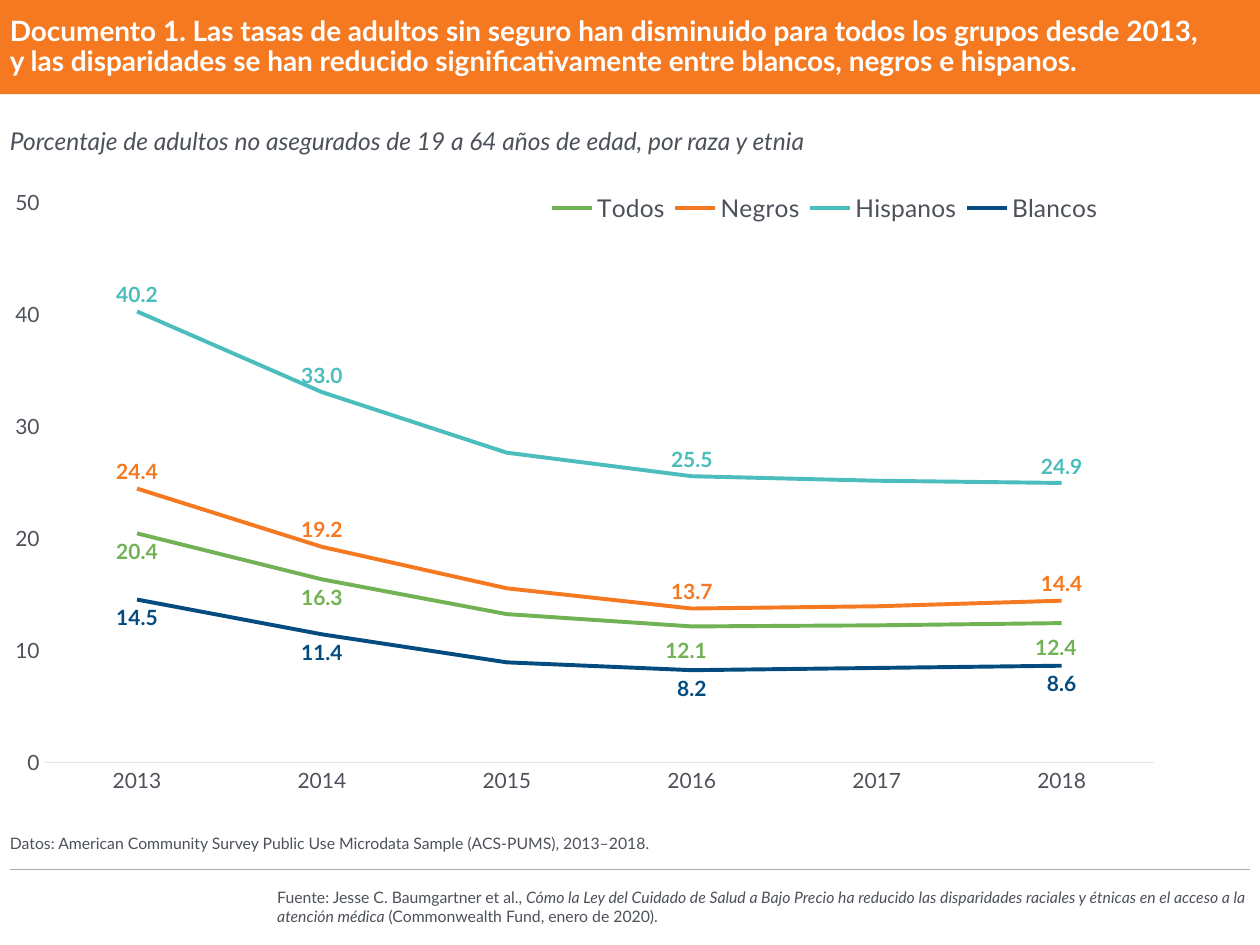
"""Slide on uninsured adult rates by race and ethnicity."""
from lxml import etree
from pptx import Presentation
from pptx import util as u
from pptx.chart import data
from pptx.dml.color import RGBColor
from pptx.enum import chart as charts, shapes, text
from pptx.oxml import ns

WHITE = RGBColor(0xFF, 0xFF, 0xFF)
ORANGE = RGBColor(0xF4, 0x79, 0x20)
GREEN = RGBColor(0x71, 0xB2, 0x54)
TEAL = RGBColor(0x4A, 0xBD, 0xBC)
NAVY = RGBColor(0x04, 0x4C, 0x7F)
INK = RGBColor(0x4C, 0x51, 0x5A)
RULE = RGBColor(0xAB, 0xAB, 0xAB)
AXIS = RGBColor(0xE3, 0xE5, 0xE7)

FONT = "Lato"
MARGIN = 0.2
BAND_HEIGHT = 1.9
CONTENT_WIDTH = 25
YEARS = ["2013", "2014", "2015", "2016", "2017", "2018"]
UNLABELLED = (2, 4)
ABOVE = charts.XL_LABEL_POSITION.ABOVE
BELOW = charts.XL_LABEL_POSITION.BELOW
SERIES = [
    ("Todos", (20.4, 16.3, 13.2, 12.1, 12.2, 12.4), GREEN, BELOW),
    ("Negros", (24.4, 19.2, 15.5, 13.7, 13.9, 14.4), ORANGE, ABOVE),
    ("Hispanos", (40.2, 33, 27.6, 25.5, 25.1, 24.9), TEAL, ABOVE),
    ("Blancos", (14.5, 11.4, 8.9, 8.2, 8.4, 8.6), NAVY, BELOW),
]


def set_font(font, color, **formats):
    """Apply the slide font, a colour and any other font values."""
    font.color.rgb = color
    for name, value in {"name": FONT, **formats}.items():
        setattr(font, name, value)


def place(shape, left, top, width, height):
    """Move and size a shape in centimetres."""
    box = {"left": left, "top": top, "width": width, "height": height}
    for name, value in box.items():
        setattr(shape, name, u.Cm(value))


def write_text(shape, runs, color, size, anchor=text.MSO_ANCHOR.MIDDLE, **spacing):
    """Fill a shape with one left-aligned paragraph of formatted runs."""
    frame = shape.text_frame
    formats = {"margin_left": 0, "margin_right": 0, "margin_top": 0,
               "margin_bottom": 0, "word_wrap": True,
               "auto_size": text.MSO_AUTO_SIZE.NONE, "vertical_anchor": anchor}
    for name, value in formats.items():
        setattr(frame, name, value)
    paragraph = frame.paragraphs[0]
    properties = paragraph._p.get_or_add_pPr()
    properties.set("marL", "0")
    properties.set("indent", "0")
    etree.SubElement(properties, ns.qn("a:buNone"))
    layout = {"alignment": text.PP_ALIGN.LEFT, "space_before": u.Pt(0), **spacing}
    for name, value in layout.items():
        setattr(paragraph, name, value)
    for wording, style in runs:
        for index, line in enumerate(wording.split("\n")):
            if index:
                paragraph.add_line_break()
            run = paragraph.add_run()
            run.text = line
            set_font(run.font, color, size=u.Pt(size), **style)


def add_text(slide, box, runs, size):
    """Add a text box in the ink colour."""
    shape = slide.shapes.add_textbox(*map(u.Cm, box))
    write_text(shape, runs, INK, size)


def add_band(slide, width):
    """Add the coloured band behind the title."""
    band = slide.shapes.add_shape(
        shapes.MSO_SHAPE.RECTANGLE, 0, 0, width, u.Cm(BAND_HEIGHT))
    band.shadow.inherit = False
    band.fill.solid()
    band.fill.fore_color.rgb = ORANGE
    band.line.fill.background()
    slide.shapes.title.element.addprevious(band.element)


def add_rule(slide, top):
    """Add the thin footer rule."""
    line = slide.shapes.add_connector(
        shapes.MSO_CONNECTOR.STRAIGHT, u.Cm(MARGIN), u.Cm(top),
        u.Cm(MARGIN + CONTENT_WIDTH), u.Cm(top))
    line.line.color.rgb = RULE
    line.line.width = u.Pt(0.75)
    etree.SubElement(line.element.spPr, ns.qn("a:effectLst"))


def manual_layout(inner=False, edge=True, **values):
    """Return a chart layout element with fractions of the chart size."""
    layout = etree.Element(ns.qn("c:layout"))
    manual = etree.SubElement(layout, ns.qn("c:manualLayout"))
    entries = {"layoutTarget": "inner"} if inner else {}
    if edge:
        entries.update(xMode="edge", yMode="edge")
    for name, value in {**entries, **values}.items():
        etree.SubElement(manual, ns.qn(f"c:{name}")).set("val", str(value))
    return layout


def format_axis(axis):
    """Give an axis its font and remove ticks and gridlines."""
    axis.has_major_gridlines = False
    axis.major_tick_mark = axis.minor_tick_mark = charts.XL_TICK_MARK.NONE
    set_font(axis.tick_labels.font, INK, size=u.Pt(12))


def format_series(series, color, position):
    """Colour a line and its value labels."""
    series.smooth = False
    series.format.line.color.rgb = color
    series.format.line.width = u.Pt(2.25)
    labels = series.data_labels
    formats = {"show_value": True, "position": position,
               "number_format": "#,##0.0", "number_format_is_linked": False}
    for name, value in formats.items():
        setattr(labels, name, value)
    set_font(labels.font, color, size=u.Pt(12), bold=True)


def hide_labels(chart):
    """Delete the labels of the years that show no value."""
    for labels in chart.element.xpath(".//c:ser/c:dLbls"):
        for index in reversed(UNLABELLED):
            label = etree.Element(ns.qn("c:dLbl"))
            etree.SubElement(label, ns.qn("c:idx")).set("val", str(index))
            etree.SubElement(label, ns.qn("c:delete")).set("val", "1")
            labels.insert(0, label)


def nudge_labels(chart, series, indexes):
    """Shift single labels of the first series down and left."""
    for index in indexes:
        label = series.points[index].data_label
        set_font(label.font, GREEN, size=u.Pt(12), bold=True)
        label.position = BELOW
        path = f".//c:ser[1]/c:dLbls/c:dLbl/c:idx[@val='{index}']"
        chart.element.xpath(path)[0].addnext(
            manual_layout(edge=False, x=-0.005, y=0.01))


def add_rate_chart(slide):
    """Add the line chart of uninsured rates."""
    chart_data = data.CategoryChartData()
    chart_data.categories = YEARS
    for name, values, _, _ in SERIES:
        chart_data.add_series(name, values)
    chart = slide.shapes.add_chart(
        charts.XL_CHART_TYPE.LINE, u.Cm(MARGIN), u.Cm(3.81),
        u.Cm(23.3), u.Cm(12.7), chart_data).chart
    chart.has_title = False
    set_font(chart.font, INK, size=u.Pt(14))
    chart.plots[0].vary_by_categories = False
    for axis in (chart.category_axis, chart.value_axis):
        format_axis(axis)
    chart.category_axis.format.line.color.rgb = AXIS
    chart.category_axis.format.line.width = u.Pt(0.75)
    value_axis = chart.value_axis
    value_axis.minimum_scale, value_axis.maximum_scale = 0, 50
    value_axis.major_unit = 10
    value_axis.tick_labels.number_format = "#,##0"
    value_axis.tick_labels.number_format_is_linked = False
    value_axis.format.line.fill.background()
    for series, (_, _, color, position) in zip(chart.plots[0].series, SERIES):
        format_series(series, color, position)
    hide_labels(chart)
    nudge_labels(chart, chart.plots[0].series[0], (3, 5))

    chart.has_legend = True
    chart.legend.position = charts.XL_LEGEND_POSITION.RIGHT
    chart.legend.include_in_layout = False
    set_font(chart.legend.font, INK, size=u.Pt(14))
    for old in chart.element.xpath(".//c:plotArea/c:layout | .//c:legend/c:layout"):
        old.getparent().remove(old)
    chart.element.xpath(".//c:plotArea")[0].insert(
        0, manual_layout(inner=True, x=0.03, y=0.02, w=0.96, h=0.89))
    chart.element.xpath(".//c:legendPos")[0].addnext(
        manual_layout(x=0.46, y=0, w=0.49, h=0.06))


def main():
    """Build and save the slide."""
    presentation = Presentation()
    presentation.slide_width, presentation.slide_height = u.Cm(25.4), u.Cm(19.05)
    slide = presentation.slides.add_slide(presentation.slide_layouts[1])
    title, body = slide.shapes.title, slide.placeholders[1]
    add_band(slide, presentation.slide_width)
    place(title, MARGIN, 0, CONTENT_WIDTH, BAND_HEIGHT)
    write_text(title, [(
        "Documento 1. Las tasas de adultos sin seguro han disminuido para todos los grupos desde 2013,\n"
        "y las disparidades se han reducido significativamente entre blancos, negros e hispanos.",
        {"bold": True})], WHITE, 16, line_spacing=0.9)
    place(body, MARGIN, 15.82, CONTENT_WIDTH, 1.37)
    write_text(body, [(
        "Datos: American Community Survey Public Use Microdata Sample (ACS-PUMS), 2013–2018.", {})],
        INK, 9, text.MSO_ANCHOR.BOTTOM, line_spacing=0.9, space_after=u.Pt(6))
    add_rule(slide, 17.53)
    add_text(slide, (5.59, 17.9, 19.69, 0.76), [
        ("Fuente: Jesse C. Baumgartner et al., ", {}),
        ("Cómo la Ley del Cuidado de Salud a Bajo Precio ha reducido las disparidades "
         "raciales y étnicas en el acceso a la atención médica", {"italic": True}),
        (" (Commonwealth Fund, enero de 2020).", {})], 9)
    add_rate_chart(slide)
    add_text(slide, (MARGIN, 2.54, 21.72, 0.6), [(
        "Porcentaje de adultos no asegurados de 19 a 64 años de edad, por raza y etnia",
        {"italic": True})], 14)
    presentation.save("out.pptx")


if __name__ == "__main__":
    main()
